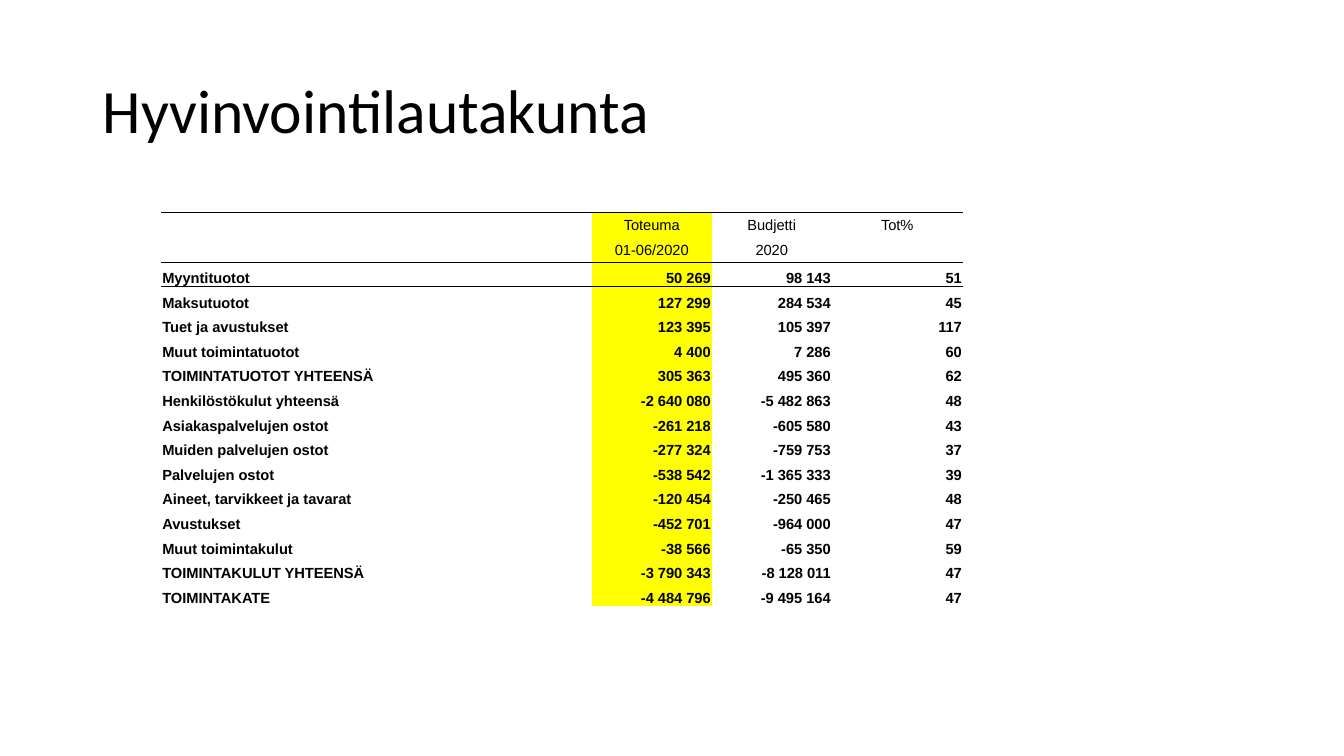
from dataclasses import dataclass

from lxml import etree
from pptx import Presentation
from pptx import util as u
from pptx.dml import color
from pptx.enum import text as t
from pptx.oxml import ns

BLACK, YELLOW = "000000", "FFFF00"
NO_STYLE = "{2D5ABB26-0587-4C30-8999-92F81FD0307C}"
COLUMN_WIDTHS = (4.27, 1.19, 1.19, 1.3)
ACTUAL_COLUMN = 1
TABLE_LEFT, TABLE_TOP, TABLE_HEIGHT = 1.6, 2.11, 3.91
# Row index to the side that carries a rule
RULES = {0: "lnT", 1: "lnB", 2: "lnT"}


@dataclass(frozen=True)
class BudgetRow:
    label: str
    actual: str
    budget: str
    percent: str
    header: bool = False

    def values(self) -> tuple[str, ...]:
        return self.label, self.actual, self.budget, self.percent


BUDGET_ROWS = [
    BudgetRow("", "Toteuma", "Budjetti", "Tot%", header=True),
    BudgetRow("", "01-06/2020", "2020", "", header=True),
    BudgetRow("Myyntituotot", "50 269", "98 143", "51"),
    BudgetRow("Maksutuotot", "127 299", "284 534", "45"),
    BudgetRow("Tuet ja avustukset", "123 395", "105 397", "117"),
    BudgetRow("Muut toimintatuotot", "4 400", "7 286", "60"),
    BudgetRow("TOIMINTATUOTOT YHTEENSÄ", "305 363", "495 360", "62"),
    BudgetRow("Henkilöstökulut yhteensä", "-2 640 080", "-5 482 863", "48"),
    BudgetRow("Asiakaspalvelujen ostot", "-261 218", "-605 580", "43"),
    BudgetRow("Muiden palvelujen ostot", "-277 324", "-759 753", "37"),
    BudgetRow("Palvelujen ostot", "-538 542", "-1 365 333", "39"),
    BudgetRow("Aineet, tarvikkeet ja tavarat", "-120 454", "-250 465", "48"),
    BudgetRow("Avustukset", "-452 701", "-964 000", "47"),
    BudgetRow("Muut toimintakulut", "-38 566", "-65 350", "59"),
    BudgetRow("TOIMINTAKULUT YHTEENSÄ", "-3 790 343", "-8 128 011", "47"),
    BudgetRow("TOIMINTAKATE", "-4 484 796", "-9 495 164", "47"),
]


def rgb(value: str) -> color.RGBColor:
    return color.RGBColor.from_string(value)


def write_text(frame, content: str, *, size: float, font: str, bold: bool = False,
               align=t.PP_ALIGN.LEFT, line_spacing: float = 1.0) -> None:
    paragraph = frame.paragraphs[0]
    paragraph.alignment = align
    paragraph.line_spacing = line_spacing
    if content:
        run = paragraph.add_run()
        run.text = content
        run.font.size = u.Pt(size)
        run.font.name = font
        run.font.bold = bold
        run.font.color.rgb = rgb(BLACK)
    else:
        # Keep empty cells from stretching their row
        etree.SubElement(paragraph._p, ns.qn("a:endParaRPr"), sz=str(int(size * 100)))


def add_rule(cell, side: str) -> None:
    properties = cell._tc.get_or_add_tcPr()
    line = etree.SubElement(properties, ns.qn(f"a:{side}"), w=str(u.Pt(0.5)))
    fill = etree.SubElement(line, ns.qn("a:solidFill"))
    etree.SubElement(fill, ns.qn("a:srgbClr"), val=BLACK)


def format_cell(cell, row: int, column: int, content: str, header: bool) -> None:
    cell.margin_left = cell.margin_right = cell.margin_top = u.Inches(0.01)
    cell.margin_bottom = 0
    if header:
        cell.vertical_anchor, align = t.MSO_ANCHOR.MIDDLE, t.PP_ALIGN.CENTER
    else:
        cell.vertical_anchor = t.MSO_ANCHOR.BOTTOM
        align = t.PP_ALIGN.RIGHT if column else t.PP_ALIGN.LEFT
    if row in RULES:
        add_rule(cell, RULES[row])
    if column == ACTUAL_COLUMN:
        cell.fill.solid()
        cell.fill.fore_color.rgb = rgb(YELLOW)
    else:
        cell.fill.background()
    write_text(cell.text_frame, content, size=10.5, font="Arial",
               bold=not header, align=align)


def add_title(slide, content: str) -> None:
    shape = slide.shapes.add_textbox(u.Inches(0.92), u.Inches(0.4),
                                     u.Inches(11.5), u.Inches(1.45))
    shape.text_frame.word_wrap = True
    shape.text_frame.vertical_anchor = t.MSO_ANCHOR.MIDDLE
    write_text(shape.text_frame, content, size=44, font="Calibri", line_spacing=0.9)


def add_budget_table(slide) -> None:
    shape = slide.shapes.add_table(
        len(BUDGET_ROWS), len(COLUMN_WIDTHS), u.Inches(TABLE_LEFT), u.Inches(TABLE_TOP),
        u.Inches(sum(COLUMN_WIDTHS)), u.Inches(TABLE_HEIGHT))
    table = shape.table
    table.first_row = table.horz_banding = False
    table._tbl.tblPr.find(ns.qn("a:tableStyleId")).text = NO_STYLE
    for column, width in zip(table.columns, COLUMN_WIDTHS):
        column.width = u.Inches(width)
    for row, budget_row in enumerate(BUDGET_ROWS):
        table.rows[row].height = u.Inches(TABLE_HEIGHT / len(BUDGET_ROWS))
        for column, content in enumerate(budget_row.values()):
            format_cell(table.cell(row, column), row, column, content, budget_row.header)


def main() -> None:
    presentation = Presentation()
    presentation.slide_width = u.Inches(13.33)
    presentation.slide_height = u.Inches(7.5)
    slide = presentation.slides.add_slide(presentation.slide_layouts[6])
    add_title(slide, "Hyvinvointilautakunta")
    add_budget_table(slide)
    presentation.save("out.pptx")


if __name__ == "__main__":
    main()
